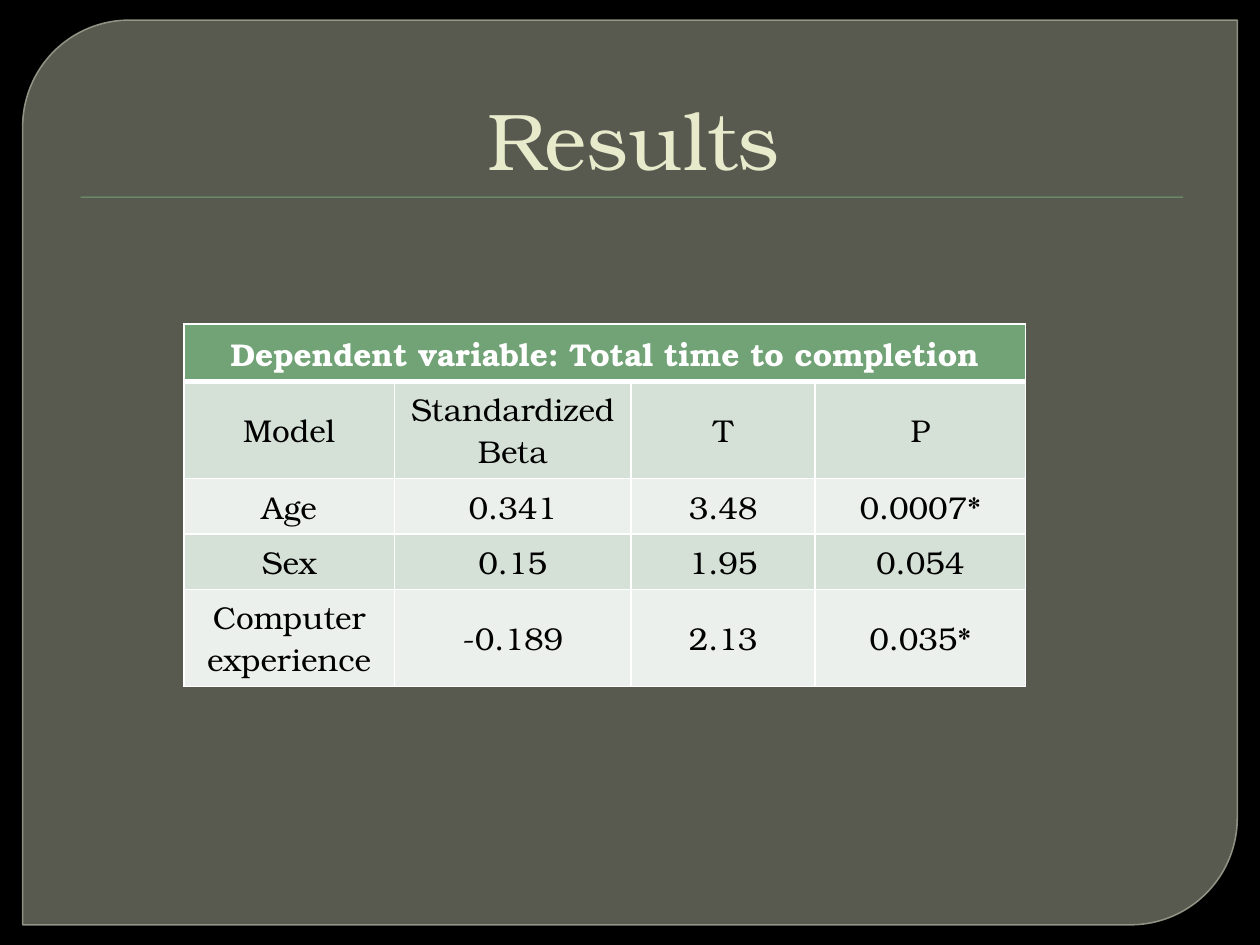
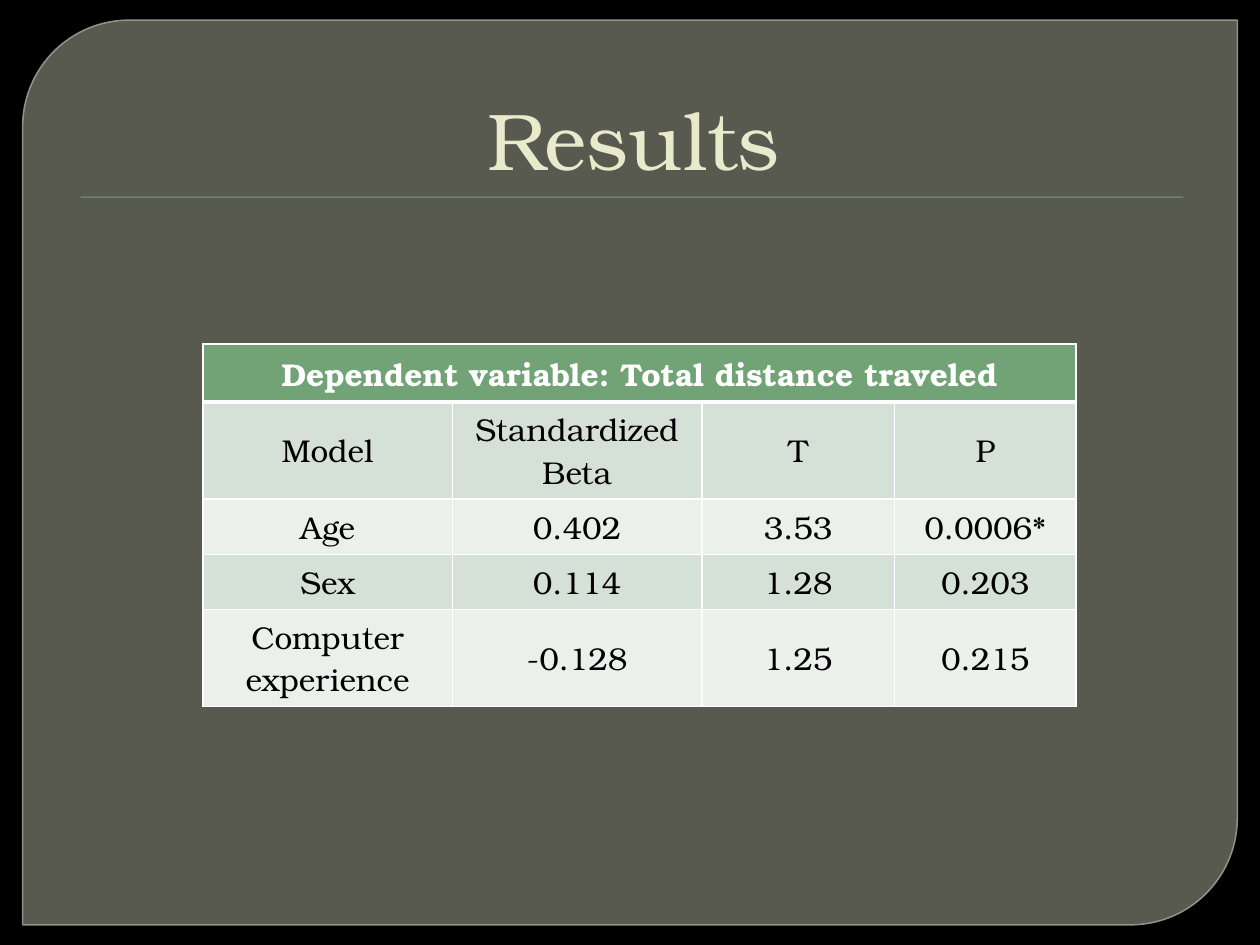
import pptx
import pptx.util
import pptx.dml.color
import pptx.enum.shapes
import pptx.enum.text
import pptx.oxml
import pptx.oxml.ns
import lxml.etree

Inches = pptx.util.Inches
Pt = pptx.util.Pt
RGBColor = pptx.dml.color.RGBColor
SHAPES = pptx.enum.shapes.MSO_SHAPE
ANCHOR = pptx.enum.text.MSO_ANCHOR
CENTER = pptx.enum.text.PP_ALIGN.CENTER
qn = pptx.oxml.ns.qn

FONT = "TeX Gyre Bonum"
BLACK = RGBColor(0x00, 0x00, 0x00)
WHITE = RGBColor(0xFF, 0xFF, 0xFF)
PANEL = RGBColor(0x88, 0x8B, 0x7B)
PANEL_EDGE = RGBColor(0x9D, 0xA0, 0x90)
GREEN = RGBColor(0x72, 0xA3, 0x76)
CREAM = RGBColor(0xE7, 0xEA, 0xCB)
BANDS = [RGBColor(0xEB, 0xF0, 0xEC), RGBColor(0xD5, 0xE0, 0xD6)]

ROW_HEIGHTS = [0.46, 0.77, 0.44, 0.44, 0.77]
COLUMN_HEADS = ["Model", "Standardized\nBeta", "T", "P"]
RESULTS = [
    {
        "place": (1.46, 2.57),
        "columns": [1.67, 1.88, 1.46, 1.67],
        "rows": [
            ["Dependent variable: Total time to completion", "", "", ""],
            COLUMN_HEADS,
            ["Age", "0.341", "3.48", "0.0007*"],
            ["Sex", "0.15", "1.95", "0.054"],
            ["Computer experience", "-0.189", "2.13", "0.035*"],
        ],
    },
    {
        "place": (1.61, 2.73),
        "columns": [1.98, 1.98, 1.53, 1.44],
        "rows": [
            ["Dependent variable: Total distance traveled", "", "", ""],
            COLUMN_HEADS,
            ["Age", "0.402", "3.53", "0.0006*"],
            ["Sex", "0.114", "1.28", "0.203"],
            ["Computer experience", "-0.128", "1.25", "0.215"],
        ],
    },
]


def write(frame, text, size, color, bold=False):
    for index, line in enumerate(text.split("\n")):
        para = frame.paragraphs[0] if index == 0 else frame.add_paragraph()
        para.alignment = CENTER
        span = para.add_run()
        span.text = line
        span.font.name = FONT
        span.font.size = Pt(size)
        span.font.bold = bold
        span.font.color.rgb = color


def set_opacity(properties, percent):
    color = properties.find(qn("a:solidFill")).find(qn("a:srgbClr"))
    lxml.etree.SubElement(color, qn("a:alpha")).set("val", str(percent * 1000))


deck = pptx.Presentation()
deck.slide_width = Inches(10)
deck.slide_height = Inches(7.5)

for result in RESULTS:
    page = deck.slides.add_slide(deck.slide_layouts[6])
    page.background.fill.solid()
    page.background.fill.fore_color.rgb = BLACK

    panel = page.shapes.add_shape(
        SHAPES.ROUND_2_DIAG_RECTANGLE, Inches(0.18), Inches(0.16), Inches(9.64), Inches(7.18))
    panel.adjustments[0] = 0.118
    panel.adjustments[1] = 0
    panel.shadow.inherit = False
    panel.fill.solid()
    panel.fill.fore_color.rgb = PANEL
    panel.line.color.rgb = PANEL_EDGE
    panel.line.width = Pt(0.87)
    set_opacity(panel.element.spPr, 65)
    set_opacity(panel.element.spPr.find(qn("a:ln")), 88)

    rule = page.shapes.add_shape(
        SHAPES.RECTANGLE, Inches(0.64), Inches(1.56), Inches(8.75), Inches(0.01))
    rule.shadow.inherit = False
    rule.fill.solid()
    rule.fill.fore_color.rgb = GREEN
    rule.line.fill.background()

    title = page.shapes.add_textbox(Inches(0.5), Inches(0.28), Inches(9), Inches(1.25))
    title.text_frame.word_wrap = True
    title.text_frame.vertical_anchor = ANCHOR.BOTTOM
    title.text_frame.margin_left = Inches(0.16)
    write(title.text_frame, "Results", 46, CREAM)

    left, top = result["place"]
    rows, columns = result["rows"], result["columns"]
    table = page.shapes.add_table(
        len(rows), len(columns), Inches(left), Inches(top),
        Inches(sum(columns)), Inches(sum(ROW_HEIGHTS))).table
    for column, width in zip(table.columns, columns):
        column.width = Inches(width)
    for row, height in zip(table.rows, ROW_HEIGHTS):
        row.height = Inches(height)
    table.cell(0, 0).merge(table.cell(0, len(columns) - 1))

    for row_index, row in enumerate(rows):
        header = row_index == 0
        for column_index, text in enumerate(row):
            cell = table.cell(row_index, column_index)
            cell.vertical_anchor = ANCHOR.MIDDLE
            properties = cell._tc.get_or_add_tcPr()
            for side in "LRTB":
                thick = (row_index, side) in [(0, "B"), (1, "T")]
                border = lxml.etree.SubElement(properties, qn("a:ln" + side))
                border.set("w", str(Pt(3 if thick else 1)))
                paint = lxml.etree.SubElement(border, qn("a:solidFill"))
                lxml.etree.SubElement(paint, qn("a:srgbClr")).set("val", str(WHITE))
            cell.fill.solid()
            cell.fill.fore_color.rgb = GREEN if header else BANDS[row_index % 2]
            if text:
                write(cell.text_frame, text, 18, WHITE if header else BLACK, header)

deck.save("out.pptx")
